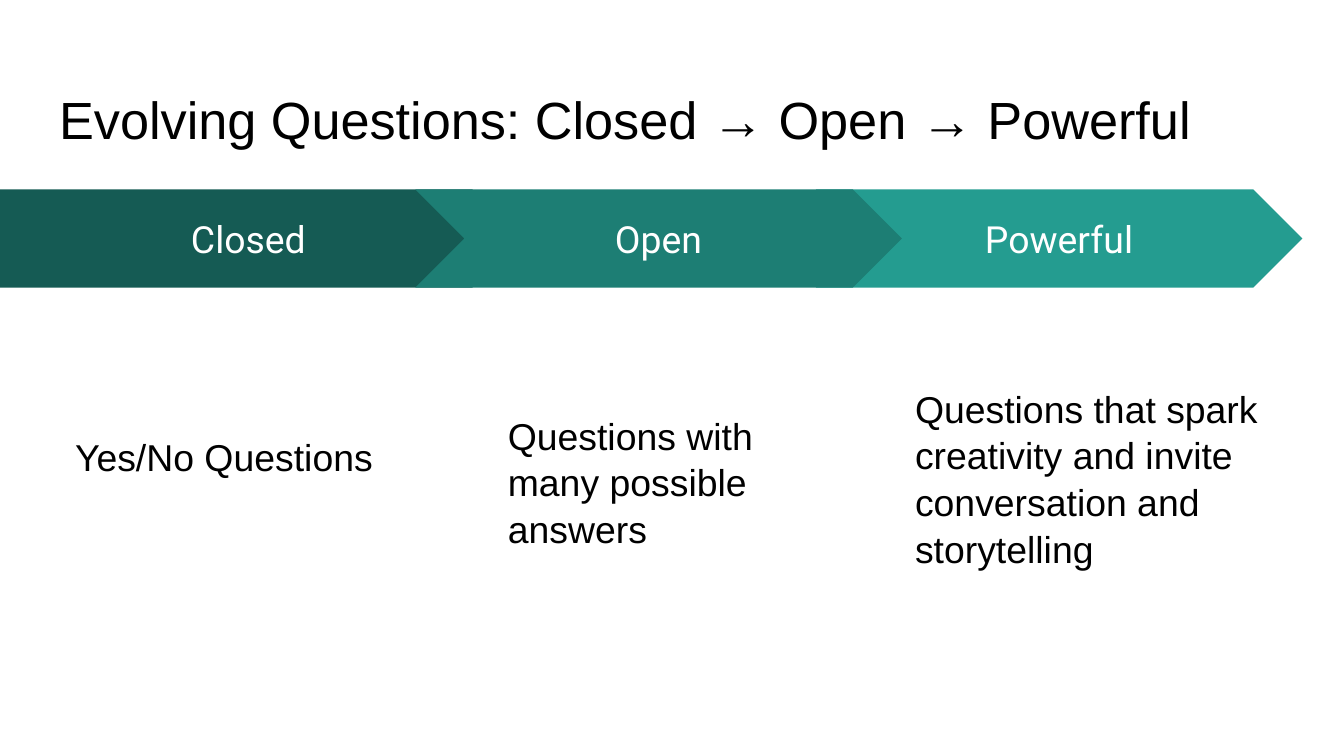
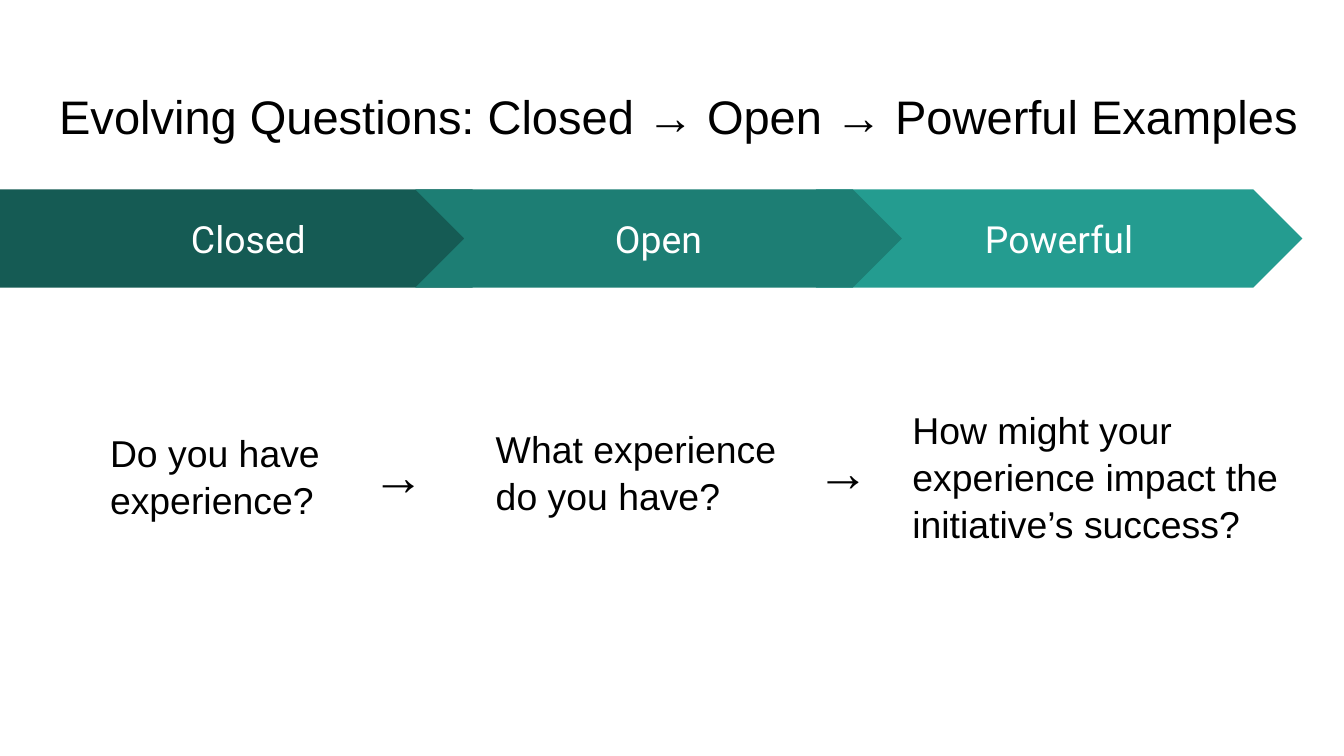
from pptx import Presentation
from pptx import util as u
from pptx.dml.color import RGBColor
from pptx.enum import shapes, text

# Square grid: 100 columns across the slide, 56.25 rows down.
COLUMNS, ROWS = 100, 56.25
CELL = u.Inches(0.1)

BLACK, WHITE = "000000", "FFFFFF"
BAND_TOP, BAND_HEIGHT = 14.1, 7.3
STEP_LEFT, STEP_PITCH, STEP_WIDTH = 1.1, 29.8, 36.2
FIRST_STEP_WIDTH = 38.8

TITLE = {"name": "Arial", "size": 28, "color": BLACK}
BODY = {"name": "Arial", "size": 20, "color": BLACK}
LABEL = {"name": "Roboto", "size": 20, "color": WHITE}

STAGES = [("Closed", "155B54"), ("Open", "1D7E74"), ("Powerful", "249C90")]
# The middle stage is drawn last so that it lies over both neighbours.
DRAWING_ORDER = (2, 0, 1)

PAGES = [
    {
        "title": "Evolving Questions: Closed → Open → Powerful",
        "title_size": 28,
        "answers": [
            ("Yes/No Questions", (4.6, 31.2, 24.5, 23)),
            ("Questions with many possible answers", (36.8, 29.6, 24.5, 28.6)),
            ("Questions that spark creativity and invite conversation "
             "and storytelling", (67.1, 27.6, 33.1, 28.6)),
        ],
        "arrows": [],
    },
    {
        "title": "Evolving Questions: Closed → Open → Powerful Examples",
        "title_size": 25.2,
        "answers": [
            ("Do you have experience?", (7.2, 30.9, 24.5, 23)),
            ("What experience do you have?", (35.9, 30.6, 24.5, 28.6)),
            ("How might your experience impact the initiative’s success?",
             (66.9, 29.2, 33.1, 28.6)),
        ],
        "arrows": [(26.7, 32, 7.3, 6.7), (59.8, 31.7, 7.3, 6.7)],
    },
]


def color(hex_value):
    return RGBColor.from_string(hex_value)


def grid(*cells):
    """Turn grid columns and rows into slide lengths."""
    return [round(cell * CELL) for cell in cells]


def write(shape, words, style, align=text.PP_ALIGN.LEFT,
          anchor=text.MSO_ANCHOR.TOP, spacing=1.0):
    frame = shape.text_frame
    margin = u.Inches(0.1)
    frame_format = {
        "word_wrap": True, "vertical_anchor": anchor,
        "auto_size": text.MSO_AUTO_SIZE.NONE,
        "margin_left": margin, "margin_right": margin,
        "margin_top": margin, "margin_bottom": margin,
    }
    for name, value in frame_format.items():
        setattr(frame, name, value)
    para = frame.paragraphs[0]
    para.alignment, para.line_spacing = align, spacing
    span = para.add_run()
    span.text = words
    span.font.name = style["name"]
    span.font.size = u.Pt(style["size"])
    span.font.color.rgb = color(style["color"])


def add_title(page, words, size):
    title = page.shapes.title
    title.left, title.top, title.width, title.height = grid(3.4, 5.5, 95.5, 6.8)
    write(title, words, {**TITLE, "size": size})


def add_stage(page, index):
    label, fill = STAGES[index]
    if index == 0:
        kind, left, width = shapes.MSO_SHAPE.PENTAGON, 0, FIRST_STEP_WIDTH
    else:
        kind = shapes.MSO_SHAPE.CHEVRON
        left, width = STEP_LEFT + index * STEP_PITCH, STEP_WIDTH
    stage = page.shapes.add_shape(kind, *grid(left, BAND_TOP, width, BAND_HEIGHT))
    stage.shadow.inherit = False
    stage.fill.solid()
    stage.fill.fore_color.rgb = color(fill)
    stage.line.fill.background()
    write(stage, label, LABEL, text.PP_ALIGN.CENTER, text.MSO_ANCHOR.MIDDLE)


def add_words(page, words, place, style, spacing=1.0):
    box = page.shapes.add_textbox(*grid(*place))
    write(box, words, style, spacing=spacing)


def build_page(deck, content):
    page = deck.slides.add_slide(deck.slide_layouts.get_by_name("Title Only"))
    page.background.fill.solid()
    page.background.fill.fore_color.rgb = color(WHITE)
    add_title(page, content["title"], content["title_size"])
    for index in DRAWING_ORDER:
        add_stage(page, index)
        words, place = content["answers"][index]
        add_words(page, words, place, BODY, spacing=1.04)
    for place in content["arrows"]:
        add_words(page, "→", place, TITLE)


def main():
    deck = Presentation()
    deck.slide_width, deck.slide_height = grid(COLUMNS, ROWS)
    for content in PAGES:
        build_page(deck, content)
    deck.save("out.pptx")


if __name__ == "__main__":
    main()
